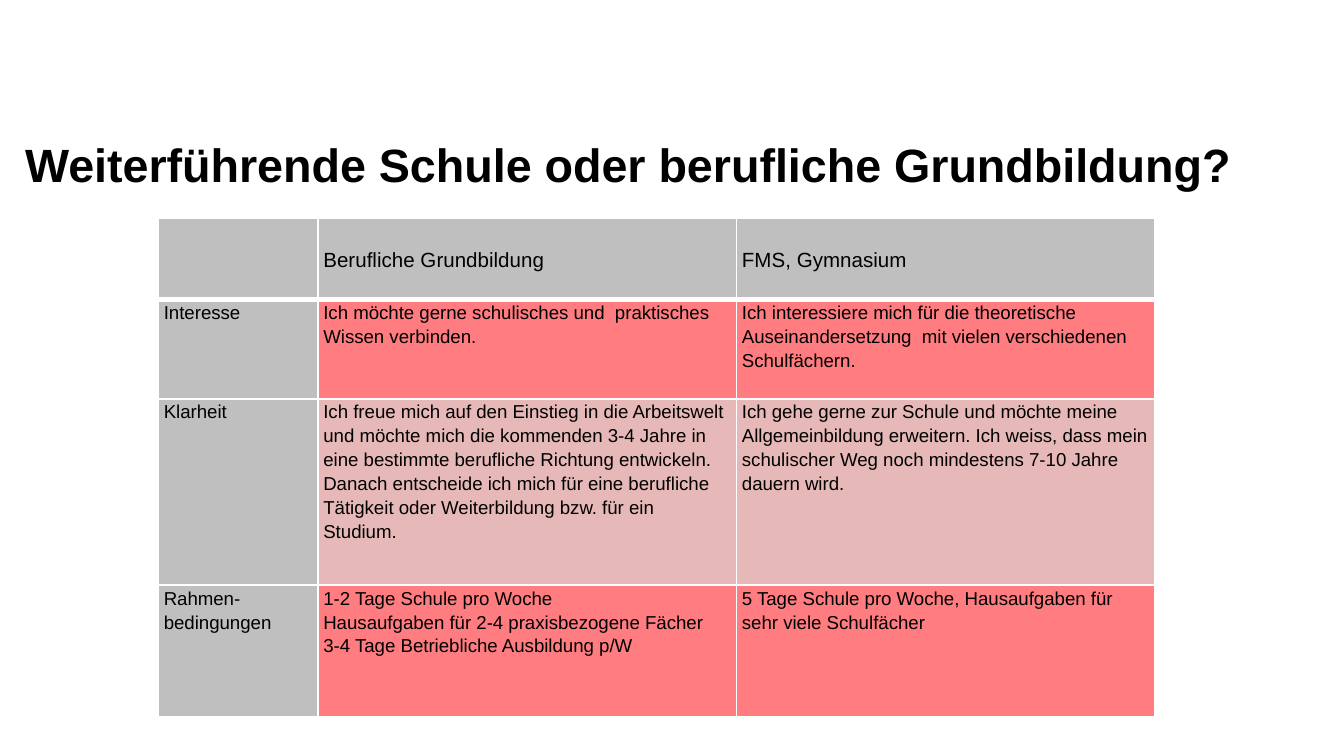
from lxml import etree
from pptx import Presentation
from pptx.dml.color import RGBColor
from pptx.enum.text import MSO_ANCHOR, MSO_AUTO_SIZE, PP_ALIGN
from pptx.oxml.ns import qn
from pptx.util import Emu, Pt

TOP, MIDDLE, BOTTOM = MSO_ANCHOR.TOP, MSO_ANCHOR.MIDDLE, MSO_ANCHOR.BOTTOM
LEFT = PP_ALIGN.LEFT
NO_FIT = MSO_AUTO_SIZE.NONE

BLACK = RGBColor(0x00, 0x00, 0x00)
WHITE = RGBColor(0xFF, 0xFF, 0xFF)
GREY = RGBColor(0xBF, 0xBF, 0xBF)
RED = RGBColor(0xFF, 0x7C, 0x80)
ROSE = RGBColor(0xE6, 0xB9, 0xB8)

TITLE_ONLY = 5
EMU_PER_PX = 9525  # 96 px to the inch


def px(length):
    return Emu(length * EMU_PER_PX)


class SlideBuilder:
    font = "Arial"
    cell_margin = 4

    def __init__(self, slide):
        self.slide = slide

    def style(self, paragraph, size, spacing, bold=False):
        paragraph.alignment = LEFT
        paragraph.line_spacing = spacing
        paragraph.font.name = self.font
        paragraph.font.size = Pt(size)
        paragraph.font.bold = bold
        paragraph.font.color.rgb = BLACK

    def title(self, text, left, top, width, height):
        heading = self.slide.shapes.title
        heading.left, heading.top = px(left), px(top)
        heading.width, heading.height = px(width), px(height)
        frame = heading.text_frame
        frame.text = text
        frame.word_wrap = True
        frame.auto_size = NO_FIT
        frame.vertical_anchor = BOTTOM
        frame.margin_left = frame.margin_right = 0
        frame.margin_top = frame.margin_bottom = 0
        self.style(frame.paragraphs[0], 25, 0.7, bold=True)

    def borders(self, cell, bottom):
        properties = cell._tc.get_or_add_tcPr()
        widths = {"a:lnL": 1, "a:lnR": 1, "a:lnT": 1, "a:lnB": bottom}
        for position, (side, width) in enumerate(widths.items()):
            line = etree.Element(qn(side), w=str(Pt(width)))
            fill = etree.SubElement(line, qn("a:solidFill"))
            etree.SubElement(fill, qn("a:srgbClr"), val=str(WHITE))
            properties.insert(position, line)

    def cell(self, cell, text, fill, size, anchor, bottom):
        cell.margin_left = cell.margin_right = px(self.cell_margin)
        cell.margin_top = cell.margin_bottom = 0
        cell.vertical_anchor = anchor
        cell.text = text
        for paragraph in cell.text_frame.paragraphs:
            self.style(paragraph, size, 1.15)
        cell.fill.solid()
        cell.fill.fore_color.rgb = fill
        self.borders(cell, bottom)

    def table(self, rows, fills, left, top, widths, heights):
        table = self.slide.shapes.add_table(
            len(rows), len(widths), px(left), px(top),
            px(sum(widths)), px(sum(heights))).table
        for column, width in zip(table.columns, widths):
            column.width = px(width)
        for r, (texts, fill, height) in enumerate(zip(rows, fills, heights)):
            table.rows[r].height = px(height)
            header = r == 0
            for c, text in enumerate(texts):
                self.cell(table.cell(r, c), text,
                          GREY if c == 0 else fill,
                          11 if header else 10,
                          MIDDLE if header else TOP,
                          3 if header else 1)


COMPARISON = [
    ("", "Berufliche Grundbildung", "FMS, Gymnasium"),
    ("Interesse",
     "Ich möchte gerne schulisches und  praktisches Wissen verbinden.",
     "Ich interessiere mich für die theoretische Auseinandersetzung  mit "
     "vielen verschiedenen Schulfächern."),
    ("Klarheit",
     "Ich freue mich auf den Einstieg in die Arbeitswelt und möchte mich die "
     "kommenden 3-4 Jahre in eine bestimmte berufliche Richtung entwickeln. "
     "Danach entscheide ich mich für eine berufliche Tätigkeit oder "
     "Weiterbildung bzw. für ein Studium.",
     "Ich gehe gerne zur Schule und möchte meine Allgemeinbildung erweitern. "
     "Ich weiss, dass mein schulischer Weg noch mindestens 7-10 Jahre dauern "
     "wird."),
    ("Rahmen-bedingungen",
     "1-2 Tage Schule pro Woche\n"
     "Hausaufgaben für 2-4 praxisbezogene Fächer\n"
     "3-4 Tage Betriebliche Ausbildung p/W",
     "5 Tage Schule pro Woche, Hausaufgaben für sehr viele Schulfächer"),
]


def main():
    presentation = Presentation()
    presentation.slide_width, presentation.slide_height = px(960), px(540)
    layout = presentation.slide_layouts[TITLE_ONLY]
    builder = SlideBuilder(presentation.slides.add_slide(layout))

    # Heading
    builder.title("Weiterführende Schule oder berufliche Grundbildung?",
                  18, 77, 923, 59)

    # Comparison of the two paths
    builder.table(COMPARISON, [GREY, RED, ROSE, RED], 113, 156,
                  widths=[114, 299, 299], heights=[58, 71, 133, 94])

    presentation.save("out.pptx")


if __name__ == "__main__":
    main()
